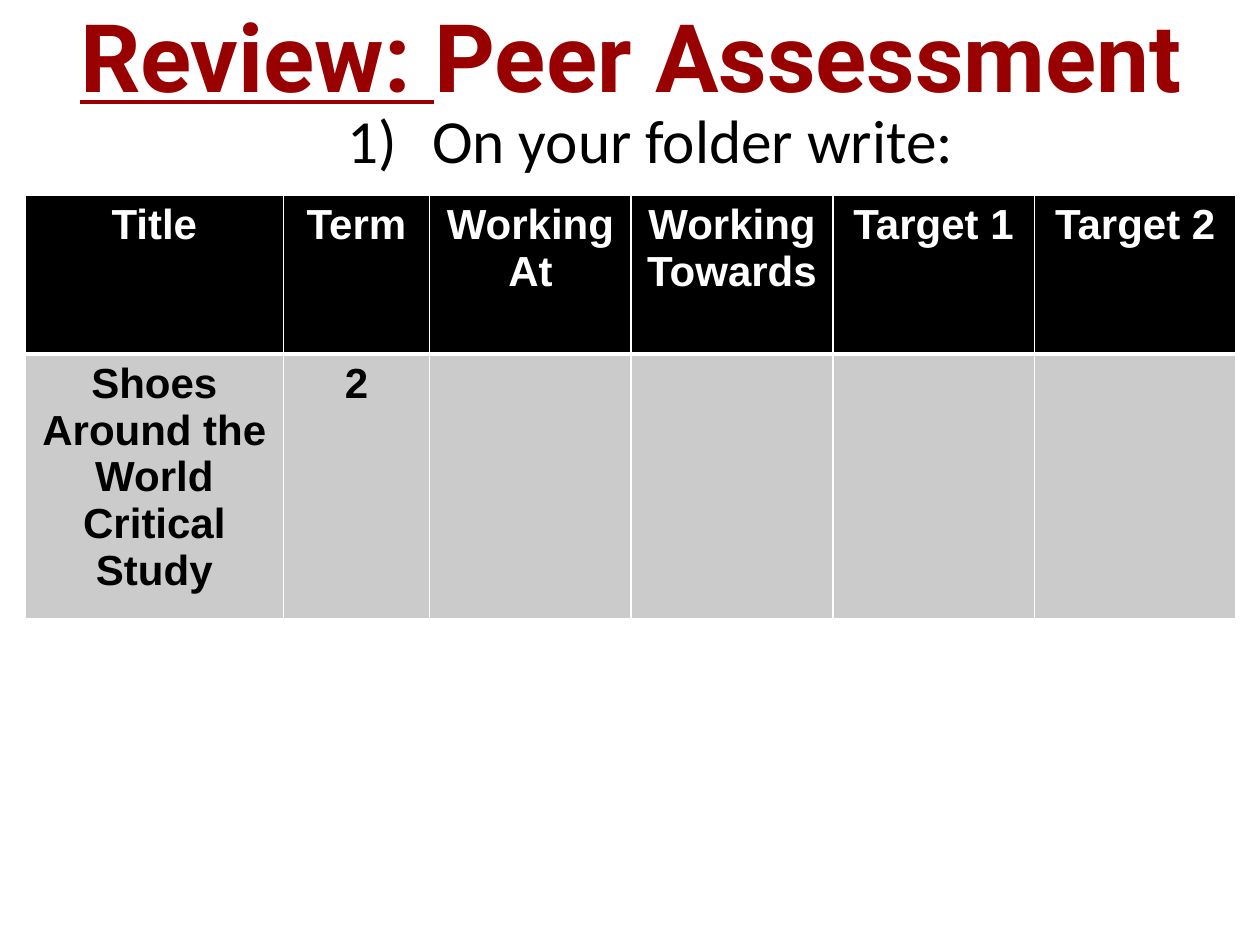
from lxml.etree import SubElement
from pptx import Presentation
from pptx.dml.color import RGBColor
from pptx.enum.text import MSO_ANCHOR, PP_ALIGN
from pptx.oxml.ns import qn
from pptx.util import Inches, Pt

TITLE = [("Review: ", True), ("Peer Assessment", False)]  # text, underlined
TASK = "On your folder write:"
COLUMNS = [("Title", 2.05), ("Term", 1.16), ("Working At", 1.6),
           ("Working Towards", 1.6), ("Target 1", 1.6), ("Target 2", 1.6)]
ENTRY = ["Shoes Around the World Critical Study", "2", "", "", "", ""]
ROWS = [  # texts, height, fill, font colour, top and bottom border widths
    ([name for name, _ in COLUMNS], 1.26, "000000", "FFFFFF", 1, 3),
    (ENTRY, 1.95, "CBCBCB", "000000", 3, 1),
]


def set_font(p, name, size, color, bold=False):
    p.alignment = PP_ALIGN.CENTER
    p.font.name, p.font.size, p.font.bold = name, Pt(size), bold
    p.font.color.rgb = RGBColor.from_string(color)


def add_text(s, left, top, width, height, anchor):
    tf = s.shapes.add_textbox(*map(Inches, (left, top, width, height))).text_frame
    tf.word_wrap = True
    tf.vertical_anchor = anchor
    return tf.paragraphs[0]


def number(p, indent):
    """Number the paragraph as 1) with a hanging indent in inches."""
    pPr = p._p.get_or_add_pPr()
    pPr.set("marL", str(Inches(indent)))
    pPr.set("indent", str(-Inches(indent)))
    bullet = pPr.makeelement(qn("a:buAutoNum"), {"type": "arabicParenR"})
    pPr.find(qn("a:spcBef")).addnext(bullet)


def set_borders(cell, top, bottom, color="FFFFFF"):
    tcPr = cell._tc.get_or_add_tcPr()
    widths = {"lnL": 1, "lnR": 1, "lnT": top, "lnB": bottom}
    for side, width in widths.items():
        ln = SubElement(tcPr, qn(f"a:{side}"), w=str(Pt(width)))
        SubElement(SubElement(ln, qn("a:solidFill")), qn("a:srgbClr"), val=color)


prs = Presentation()
prs.slide_width, prs.slide_height = Inches(10), Inches(7.5)
s = prs.slides.add_slide(prs.slide_layouts[6])

p = add_text(s, 0.51, -0.19, 9, 1.25, MSO_ANCHOR.MIDDLE)
set_font(p, "Roboto", 54, "990000", bold=True)
for text, underlined in TITLE:
    r = p.add_run()
    r.text, r.font.underline = text, underlined

p = add_text(s, 0.59, 0.76, 9.15, 6.74, MSO_ANCHOR.TOP)
p.text = TASK
p.space_before = Pt(7)
set_font(p, "Calibri", 35, "000000")
number(p, 0.67)

width = sum(w for _, w in COLUMNS)
height = sum(row[1] for row in ROWS)
table = s.shapes.add_table(len(ROWS), len(COLUMNS), Inches(0.2), Inches(1.55),
                           Inches(width), Inches(height)).table
for column, (_, w) in zip(table.columns, COLUMNS):
    column.width = Inches(w)
for i, (texts, h, fill, color, top, bottom) in enumerate(ROWS):
    table.rows[i].height = Inches(h)
    for j, text in enumerate(texts):
        cell = table.cell(i, j)
        cell.text = text
        set_font(cell.text_frame.paragraphs[0], "Arial", 24, color, bold=True)
        set_borders(cell, top, bottom)
        cell.fill.solid()
        cell.fill.fore_color.rgb = RGBColor.from_string(fill)

prs.save("out.pptx")
